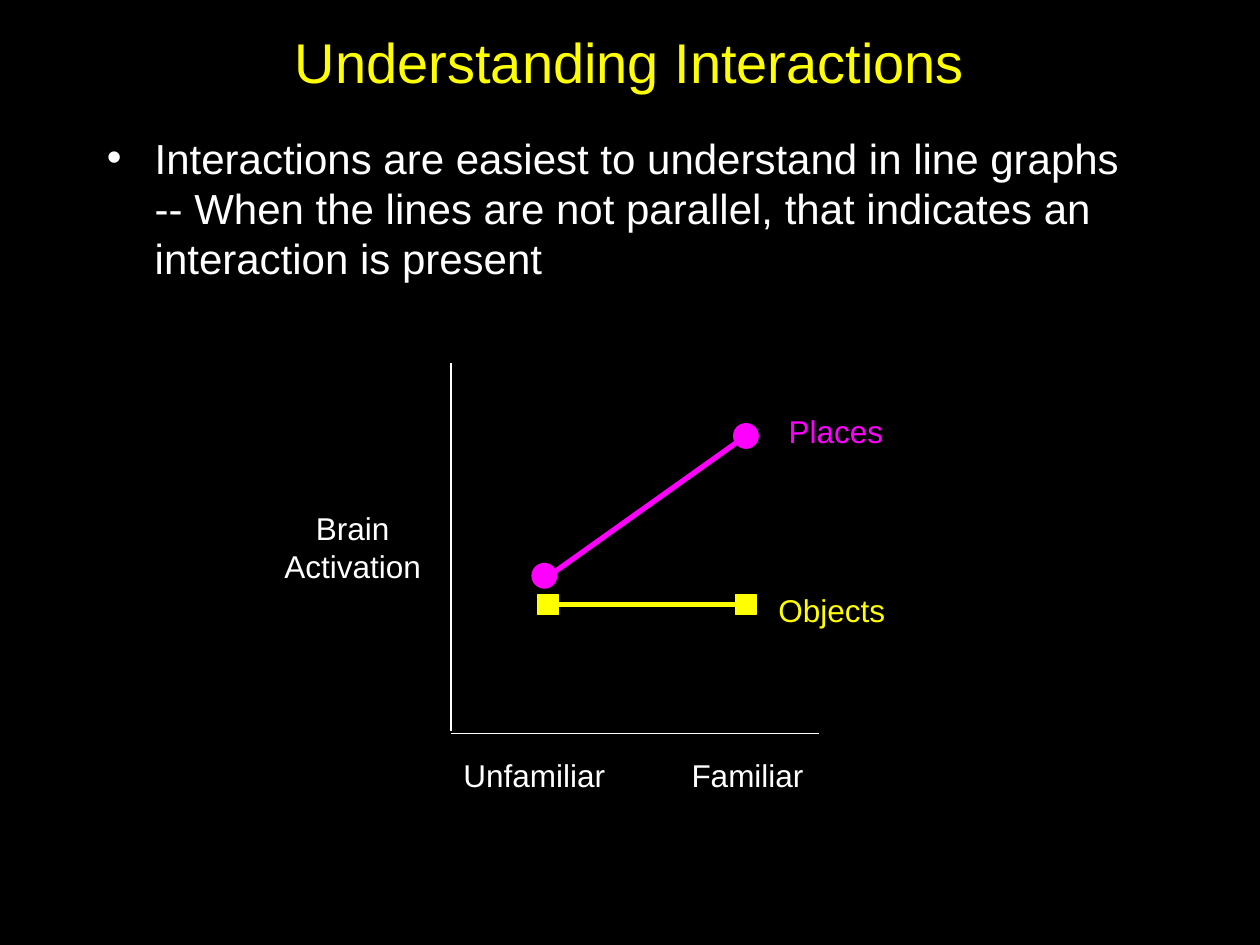
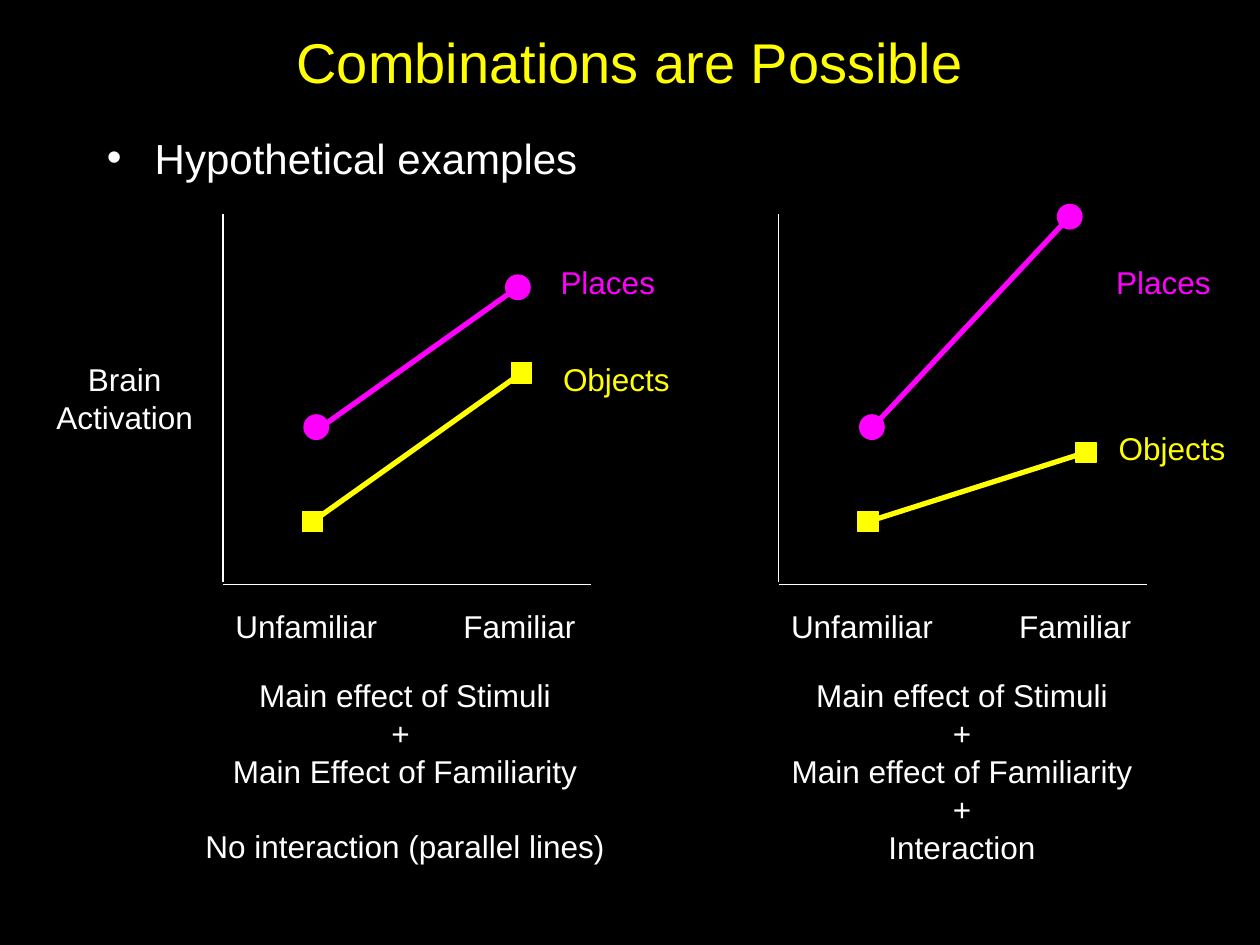
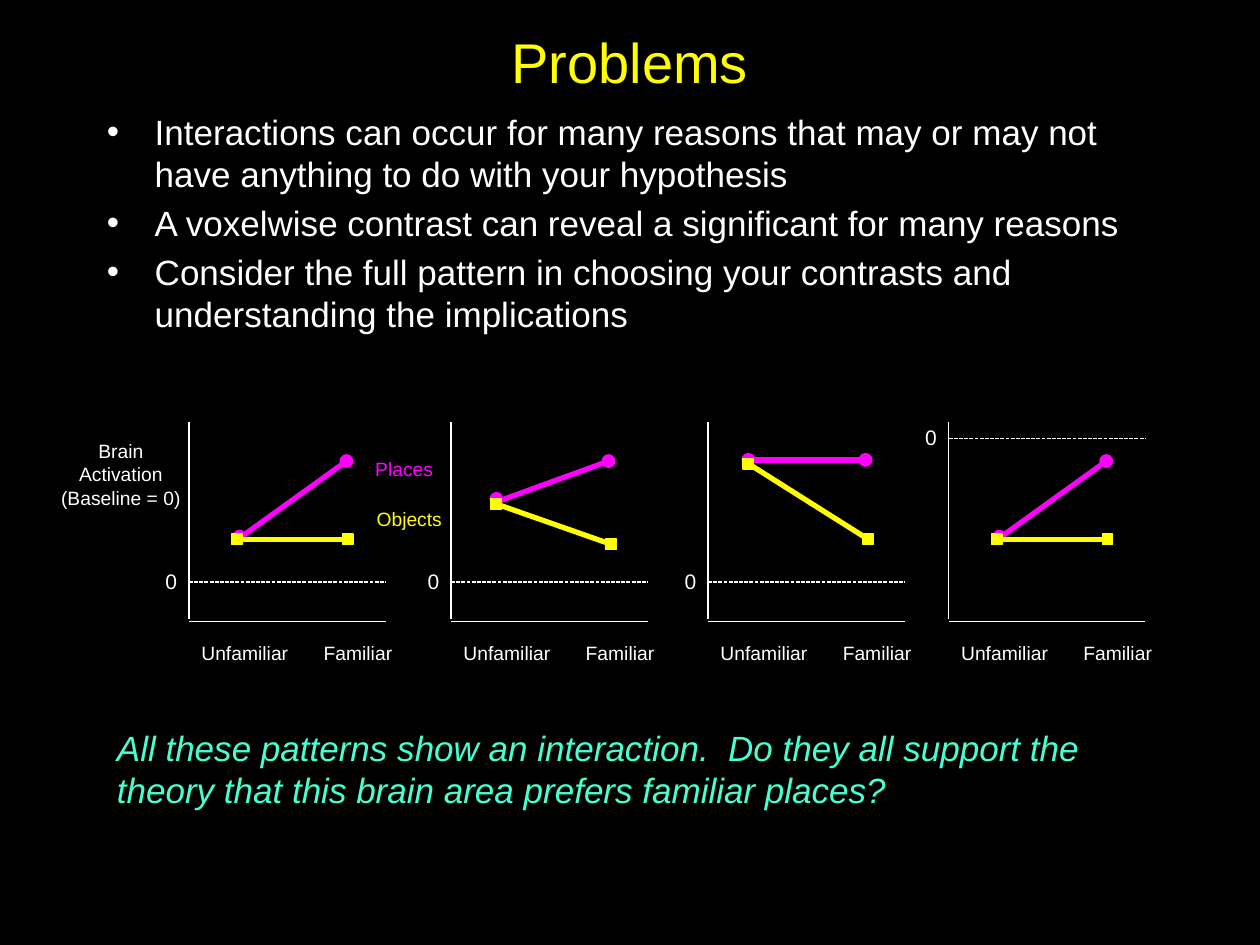
from dataclasses import dataclass

from lxml import etree
from pptx import Presentation
from pptx.dml.color import RGBColor
from pptx.enum.dml import MSO_LINE
from pptx.enum.shapes import MSO_CONNECTOR, MSO_SHAPE
from pptx.enum.text import MSO_ANCHOR, PP_ALIGN
from pptx.oxml.ns import qn
from pptx.util import Inches, Pt

LEFT, CENTER = PP_ALIGN.LEFT, PP_ALIGN.CENTER
TOP, MIDDLE = MSO_ANCHOR.TOP, MSO_ANCHOR.MIDDLE
STRAIGHT = MSO_CONNECTOR.STRAIGHT
SQUARE, CIRCLE = MSO_SHAPE.RECTANGLE, MSO_SHAPE.OVAL
DASH = MSO_LINE.SQUARE_DOT

COLORS = {"background": "000000", "text": "FFFFFF", "title": "FFFF00",
          "objects": "FFFF00", "places": "FF00FF", "question": "47FFD1"}
FONT = "Arial"
COLUMNS, ROWS = 100, 75


@dataclass
class GraphSize:
    """Measures of a line graph, in grid cells."""
    axis: float
    label_drop: float
    label_step: float
    label_height: float
    widths: dict
    font: float
    square: float
    circle: float
    nudge: tuple


LARGE = GraphSize(29.2, 1.3, 18.1, 4, {"Unfamiliar": 13.3, "Familiar": 10.9,
                  "Objects": 10.5, "Places": 9.5}, 18, 1.6, 1.95, (0.6, -0.7))
SMALL = GraphSize(15.6, 1.1, 9.7, 2.9, {"Unfamiliar": 9, "Familiar": 7.5,
                  "Objects": 7.2, "Places": 6.6}, 11, 0.85, 1, (0.4, -0.4))


def rgb(name):
    return RGBColor.from_string(COLORS[name])


def write(tf, lines, size=18, color="text", align=LEFT, italic=False,
          bullet=False, gap=0, last_gap=0):
    """Fill a text frame with one paragraph per line; gaps are in points."""
    for i, line in enumerate(lines):
        p = tf.paragraphs[0] if i == 0 else tf.add_paragraph()
        if bullet:
            pPr = p._p.get_or_add_pPr()
            pPr.set("marL", str(Inches(0.38)))
            pPr.set("indent", str(-Inches(0.38)))
            etree.SubElement(pPr, qn("a:buFont")).set("typeface", FONT)
            etree.SubElement(pPr, qn("a:buChar")).set("char", "•")
        p.alignment = align
        if i:
            p.space_before = Pt(last_gap if last_gap and i == len(lines) - 1 else gap)
        r = p.add_run()
        r.text = line
        r.font.name, r.font.size, r.font.italic = FONT, Pt(size), italic
        r.font.color.rgb = rgb(color)


class Deck:
    def __init__(self):
        self.prs = Presentation()
        self.prs.slide_width, self.prs.slide_height = Inches(10), Inches(7.5)
        self.col = self.prs.slide_width / COLUMNS
        self.row = self.prs.slide_height / ROWS
        fill = self.prs.slide_master.background.fill
        fill.solid()
        fill.fore_color.rgb = rgb("background")
        self.s = None

    def cells(self, x, y):
        return round(x * self.col), round(y * self.row)

    def slide(self, title, bullets, top=10, height=8.3, size=24):
        self.s = self.prs.slides.add_slide(self.prs.slide_layouts[6])
        self.text([title], 7.5, 1.7, 85, 6.3, wrap=True, anchor=MIDDLE,
                  size=32, color="title", align=CENTER)
        self.text(bullets, 7.5, top, 85, height, wrap=True, size=size,
                  bullet=True, gap=size / 5)

    def text(self, lines, x, y, w, h, wrap=False, anchor=TOP, **style):
        sp = self.s.shapes.add_textbox(*self.cells(x, y), *self.cells(w, h))
        tf = sp.text_frame
        tf.word_wrap, tf.vertical_anchor = wrap, anchor
        write(tf, lines, **style)

    def line(self, start, end, color="text", width=0.75, dash=None):
        sp = self.s.shapes.add_connector(STRAIGHT, *self.cells(*start),
                                         *self.cells(*end))
        sp.line.color.rgb, sp.line.width = rgb(color), Pt(width)
        if dash:
            sp.line.dash_style = dash
        etree.SubElement(sp._element.spPr, qn("a:effectLst"))

    def marker(self, kind, center, side, color):
        x, y = center
        sp = self.s.shapes.add_shape(kind, *self.cells(x - side / 2, y - side / 2),
                                     *self.cells(side, side))
        sp.shadow.inherit = False
        sp.fill.solid()
        sp.fill.fore_color.rgb = sp.line.color.rgb = rgb(color)
        sp.line.width = Pt(0.75)

    def graph(self, origin, size, places, objects, places_label=None,
              objects_label=None, nudge=None, zero=None):
        """Draw a two-series graph; all points are offsets from its origin.

        nudge moves the first circle off the line's start; zero is the
        height of the dashed baseline.
        """
        def at(dx, dy):
            return origin[0] + dx, origin[1] + dy

        def label(text, offset, color="text"):
            self.text([text], *at(*offset), size.widths[text],
                      size.label_height, size=size.font, color=color)

        self.line(at(0, -size.axis - 0.2), at(0, -0.2))
        self.line(at(0, 0), at(size.axis, 0))
        label("Unfamiliar", (0, size.label_drop))
        label("Familiar", (size.label_step, size.label_drop))

        series = ((places, "places", CIRCLE, size.circle, nudge or size.nudge),
                  (objects, "objects", SQUARE, size.square, (0, 0)))
        for (start, end), color, kind, side, (dx, dy) in series:
            self.line(at(*start), at(*end), color, width=3)
            self.marker(kind, at(start[0] + dx, start[1] + dy), side, color)
            self.marker(kind, at(*end), side, color)
        if places_label:
            label("Places", places_label, "places")
        if objects_label:
            label("Objects", objects_label, "objects")
        if zero is not None:
            self.line(at(0, zero), at(size.axis, zero), dash=DASH)
            self.text(["0"], *at(-2.85, zero - 1.6), 3, 3, size=12)

    def axis_title(self, origin):
        self.text(["Brain", "Activation"], origin[0] - 14.8, origin[1] - 18.3,
                  14, 7, align=CENTER)


def main():
    deck = Deck()
    places_label = (25.8, -26)
    rising = ((6.8, -11.8), (23.4, -23.6))

    deck.slide("Understanding Interactions",
               ["Interactions are easiest to understand in line graphs -- When "
                "the lines are not parallel, that indicates an interaction is "
                "present"], height=56.7)
    origin = (35.8, 58.2)
    deck.axis_title(origin)
    deck.graph(origin, LARGE, rising, ((7.7, -10.2), (23.4, -10.2)),
               places_label, (25, -11.8))

    deck.slide("Combinations are Possible", ["Hypothetical examples"])
    origin = (17.7, 46.4)
    deck.axis_title(origin)
    deck.graph(origin, LARGE, rising, ((7.1, -5), (23.7, -16.8)),
               places_label, (26, -18.3))
    deck.graph((61.8, 46.4), LARGE, ((6.8, -11.8), (23.1, -29.2)),
               ((7.1, -5), (24.4, -10.5)), places_label, (26, -12.8))
    deck.text(["Main effect of Stimuli", "+ ", "Main Effect of Familiarity",
               "No interaction (parallel lines)"],
              15.3, 53.2, 33.7, 16, align=CENTER, last_gap=21.5)
    deck.text(["Main effect of Stimuli", "+", "Main effect of Familiarity", "+",
               "Interaction"], 61.8, 53.2, 29.1, 16, align=CENTER)

    deck.slide("Problems",
               ["Interactions can occur for many reasons that may or may not "
                "have anything to do with your hypothesis",
                "A voxelwise contrast can reveal a significant for many reasons",
                "Consider the full pattern in choosing your contrasts and "
                "understanding the implications"],
               top=8.3, height=19.2, size=20)
    deck.text(["Brain", "Activation", "(Baseline = 0)"], 3.3, 34.4, 12.6, 6.6,
              size=11, align=CENTER)
    base, baseline = 49.3, -3.1
    rising = ((3.6, -6.3), (12.5, -12.7))
    flat = ((3.8, -6.5), (12.6, -6.5))
    deck.graph((15, base), SMALL, rising, flat, (13.8, -13.5), (13.9, -9.5),
               zero=baseline)
    deck.graph((35.8, base), SMALL, ((3.7, -9.5), (12.5, -12.7)),
               ((3.6, -9.3), (12.7, -6.1)), nudge=(-0.1, -0.2), zero=baseline)
    deck.graph((56.2, base), SMALL, ((3.3, -12.8), (12.5, -12.8)),
               ((3.2, -12.5), (12.7, -6.5)), nudge=(-0.1, 0), zero=baseline)
    deck.graph((75.3, base), SMALL, rising, flat, zero=-14.5)
    deck.text(["All these patterns show an interaction.  Do they all support "
               "the theory that this brain area prefers familiar places?"],
              8.3, 57.2, 83.7, 7.7, wrap=True, size=20, color="question",
              italic=True)

    deck.prs.save("out.pptx")


if __name__ == "__main__":
    main()
